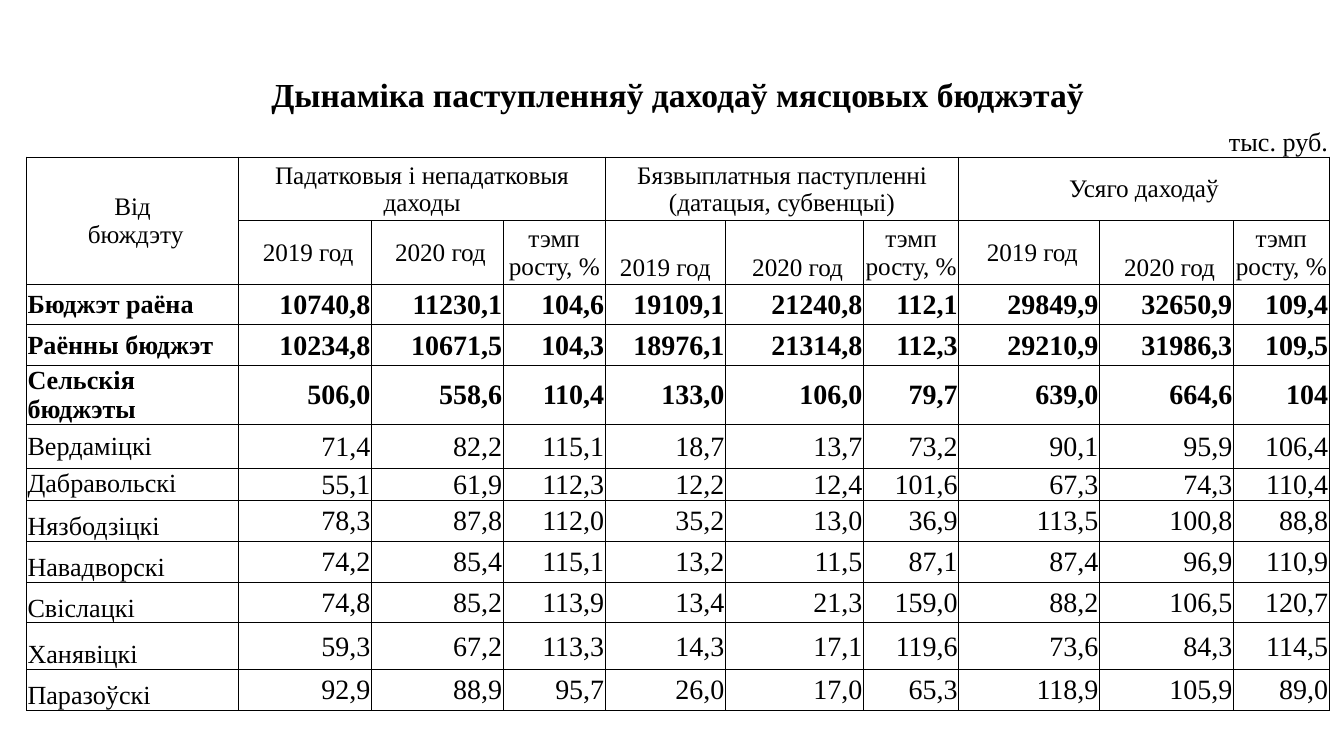
from lxml import etree
from pptx import Presentation
from pptx import util as u
from pptx.dml.color import RGBColor
from pptx.enum import text
from pptx.oxml.ns import qn

FONT = "Times New Roman"
COLORS = {"ink": "000000"}
NO_STYLE = "{2D5ABB26-0587-4C30-8999-92F81FD0307C}"
LEFT, CENTER, RIGHT = text.PP_ALIGN.LEFT, text.PP_ALIGN.CENTER, text.PP_ALIGN.RIGHT
TOP, MIDDLE, BOTTOM = (text.MSO_ANCHOR.TOP, text.MSO_ANCHOR.MIDDLE,
                       text.MSO_ANCHOR.BOTTOM)

# Sizes in centimetres
COLS = [4.01, 2.51, 2.13, 0.36, 1.93, 2.27, 0.53, 2.08, 1.8, 2.66, 2.15, 0.38, 1.81]
ROWS = [0.81, 0.81, 1.2, 1.2, 0.77, 0.77, 0.77, 0.83, 0.61, 0.77, 0.77, 0.77, 0.88, 0.77]
GROUP_STARTS = [1, 5, 9]
VALUE_COLS = [start + step for start in GROUP_STARTS for step in (0, 1, 3)]

GROUPS = ["Падатковыя і непадатковыя даходы",
          "Бязвыплатныя паступленні (датацыя, субвенцыі)",
          "Усяго даходаў"]
GROWTH = "тэмп\nросту, %"
# Each group: label and anchor of its three columns
SUBHEADS = [
    (" 2019 год", MIDDLE), (" 2020 год", MIDDLE), (GROWTH, MIDDLE),
    ("2019 год", BOTTOM), (" 2020 год", BOTTOM), (GROWTH, MIDDLE),
    (" 2019 год", MIDDLE), (" 2020 год", BOTTOM), (GROWTH, MIDDLE),
]
# Name, values, bold, anchor of the name, anchor of the values
BUDGETS = [
    ("Бюджэт раёна", "10740,8 11230,1 104,6 19109,1 21240,8 112,1 29849,9 32650,9 109,4", True, MIDDLE, MIDDLE),
    ("Раённы бюджэт", "10234,8 10671,5 104,3 18976,1 21314,8 112,3 29210,9 31986,3 109,5", True, MIDDLE, MIDDLE),
    ("Сельскія бюджэты", "506,0 558,6 110,4 133,0 106,0 79,7 639,0 664,6 104", True, MIDDLE, MIDDLE),
    ("Вердаміцкі", "71,4 82,2 115,1 18,7 13,7 73,2 90,1 95,9 106,4", False, MIDDLE, MIDDLE),
    ("Дабравольскі", "55,1 61,9 112,3 12,2 12,4 101,6 67,3 74,3 110,4", False, TOP, TOP),
    ("Нязбодзіцкі", "78,3 87,8 112,0 35,2 13,0 36,9 113,5 100,8 88,8", False, BOTTOM, MIDDLE),
    ("Навадворскі", "74,2 85,4 115,1 13,2 11,5 87,1 87,4 96,9 110,9", False, BOTTOM, MIDDLE),
    ("Свіслацкі", "74,8 85,2 113,9 13,4 21,3 159,0 88,2 106,5 120,7", False, BOTTOM, MIDDLE),
    ("Ханявіцкі", "59,3 67,2 113,3 14,3 17,1 119,6 73,6 84,3 114,5", False, BOTTOM, MIDDLE),
    ("Паразоўскі", "92,9 88,9 95,7 26,0 17,0 65,3 118,9 105,9 89,0", False, BOTTOM, MIDDLE),
]


def write(cell, content, size=13.5, bold=False, align=CENTER, anchor=MIDDLE, bottom=0):
    """Fill a cell, one paragraph for each line of the content."""
    cell.vertical_anchor = anchor
    cell.margin_left = cell.margin_right = cell.margin_top = u.Cm(0.02)
    cell.margin_bottom = u.Cm(bottom)
    tf = cell.text_frame
    for i, line in enumerate(content.split("\n")):
        p = tf.paragraphs[0] if i == 0 else tf.add_paragraph()
        p.alignment = align
        r = p.add_run()
        r.text = line
        r.font.name, r.font.size, r.font.bold = FONT, u.Pt(size), bold
        r.font.color.rgb = RGBColor.from_string(COLORS["ink"])


def add_borders(cell, width=0.5):
    tc_pr = cell._tc.get_or_add_tcPr()
    for i, side in enumerate(("lnL", "lnR", "lnT", "lnB")):
        ln = etree.Element(qn(f"a:{side}"), w=str(u.Pt(width)))
        fill = etree.SubElement(ln, qn("a:solidFill"))
        etree.SubElement(fill, qn("a:srgbClr"), val=COLORS["ink"])
        tc_pr.insert(i, ln)


def new_grid(slide, left, top):
    """Add an unstyled table with its column widths and row heights."""
    frame = slide.shapes.add_table(len(ROWS), len(COLS), u.Cm(left), u.Cm(top),
                                   u.Cm(sum(COLS)), u.Cm(sum(ROWS)))
    tb = frame.table
    tb.first_row = tb.horz_banding = False
    tb._tbl.tblPr.find(qn("a:tableStyleId")).text = NO_STYLE
    for col, width in zip(tb.columns, COLS):
        col.width = u.Cm(width)
    for row, height in zip(tb.rows, ROWS):
        row.height = u.Cm(height)
    for cell in tb.iter_cells():
        cell.fill.background()
        cell.margin_left = cell.margin_right = cell.margin_top = cell.margin_bottom = 0
    return tb


def merge_cells(tb):
    def merge(r1, c1, r2, c2):
        tb.cell(r1, c1).merge(tb.cell(r2, c2))

    merge(0, 0, 0, len(COLS) - 1)
    for first, last in ((1, 2), (3, 6), (7, 8), (11, 12)):
        merge(1, first, 1, last)
    merge(2, 0, 3, 0)
    for start in GROUP_STARTS:
        merge(2, start, 2, start + 3)
        for row in range(3, len(ROWS)):
            merge(row, start + 1, row, start + 2)


def budget_table(slide, left, top):
    tb = new_grid(slide, left, top)
    merge_cells(tb)

    # Title and unit
    write(tb.cell(0, 0), "Дынаміка паступленняў даходаў мясцовых бюджэтаў",
          size=18, bold=True, anchor=BOTTOM)
    write(tb.cell(1, 11), "тыс. руб.", size=14, align=RIGHT, anchor=BOTTOM)

    # Column heads
    write(tb.cell(2, 0), "Вiд\n бюждэту")
    for col, name in zip(GROUP_STARTS, GROUPS):
        write(tb.cell(2, col), name)
    for col, (label, anchor) in zip(VALUE_COLS, SUBHEADS):
        write(tb.cell(3, col), label, anchor=anchor,
              bottom=0.04 if anchor == BOTTOM else 0)

    # Budgets
    for row, (name, values, bold, name_anchor, anchor) in enumerate(BUDGETS, 4):
        write(tb.cell(row, 0), name, size=14, bold=bold, align=LEFT, anchor=name_anchor)
        for col, value in zip(VALUE_COLS, values.split()):
            write(tb.cell(row, col), value, size=15, bold=bold, align=RIGHT, anchor=anchor)

    # Lines below the title and unit rows
    for row in range(2, len(ROWS)):
        for col in range(len(COLS)):
            if not tb.cell(row, col).is_spanned:
                add_borders(tb.cell(row, col))


def main():
    prs = Presentation()
    prs.slide_width, prs.slide_height = u.Cm(25.4), u.Cm(14.29)
    s = prs.slides.add_slide(prs.slide_layouts[6])
    budget_table(s, left=0.5, top=1.35)
    prs.save("out.pptx")


if __name__ == "__main__":
    main()
